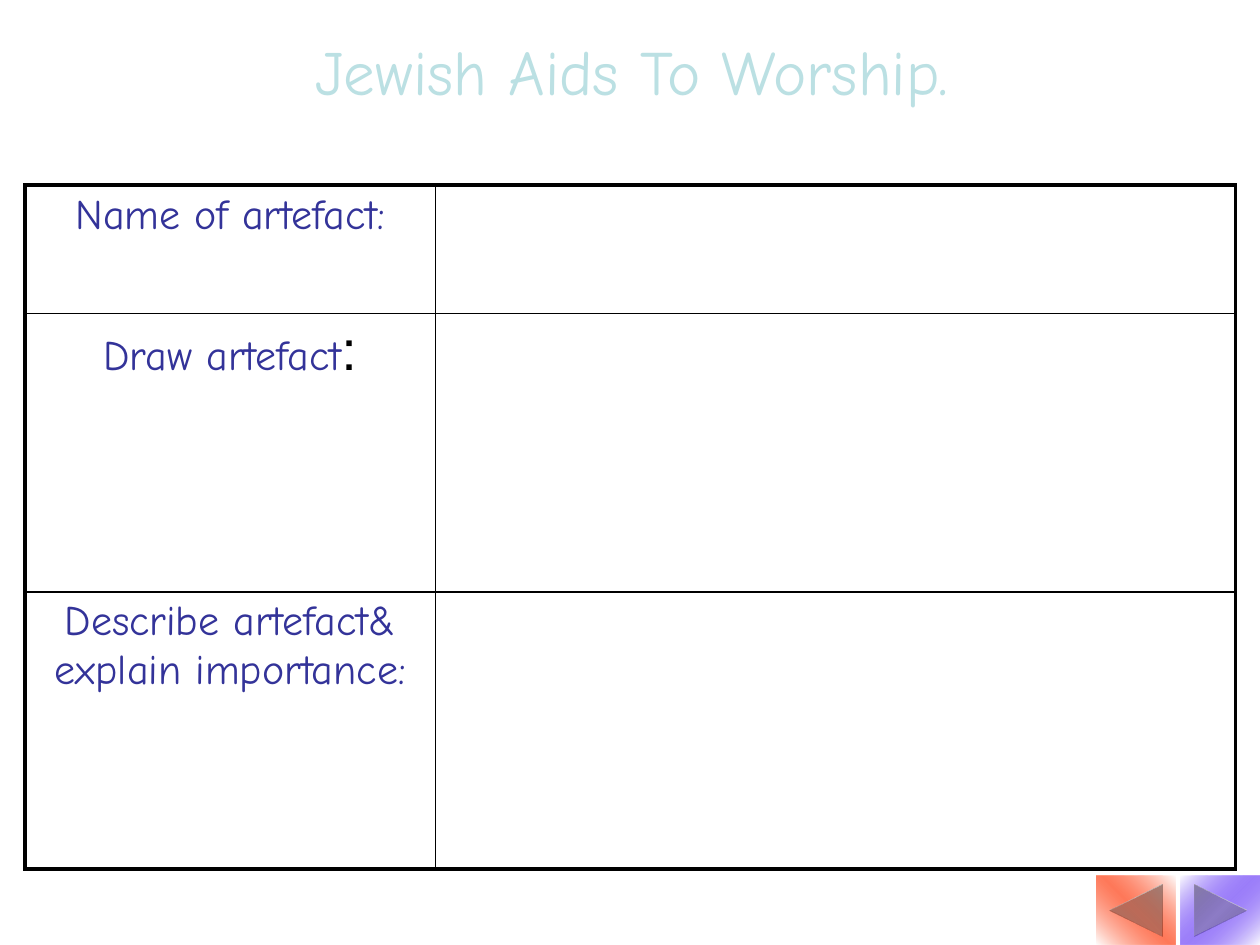
from typing import NamedTuple

from lxml.etree import SubElement
from pptx import Presentation
from pptx.dml.color import RGBColor
from pptx.enum.shapes import MSO_SHAPE as Shape
from pptx.enum.text import MSO_ANCHOR as Anchor, PP_ALIGN as Align
from pptx.oxml.ns import qn
from pptx.util import Cm, Pt

HAND, PLAIN = "Comic Neue", "Arial"
AQUA, NAVY, BLACK = "BBE0E3", "333399", "000000"
THICK, THIN = 2.25, 1


class Run(NamedTuple):
    text: str
    size: int = 24
    font: str = HAND
    tint: str = NAVY


class Row(NamedTuple):
    height: float
    runs: list[Run]


class Button(NamedTuple):
    left: float
    tint: str
    alpha: int
    flip: bool


COLS = [8.28, 16.13]
ROWS = [
    Row(2.59, [Run("Name of artefact:")]),
    Row(5.61, [Run("Draw artefact"), Run(":", 32, PLAIN, BLACK)]),
    Row(5.59, [Run("Describe artefact& explain importance:")]),
]
BUTTONS = [Button(22.1, "FF3101", 65, True), Button(23.8, "420AF6", 52, False)]


def color(code: str) -> RGBColor:
    return RGBColor.from_string(code)


def write(para, runs: list[Run]) -> None:
    para.alignment = Align.CENTER
    for item in runs:
        run = para.add_run()
        run.text = item.text
        run.font.size = Pt(item.size)
        run.font.name = item.font
        run.font.color.rgb = color(item.tint)


def add_fill(parent, code: str, alpha: int = 100):
    tint = SubElement(parent, qn("a:srgbClr"), val=code)
    if alpha < 100:
        SubElement(tint, qn("a:alpha"), val=str(alpha * 1000))


def border(cell, row: int, col: int) -> None:
    """Thick lines on the outer edge, thin lines inside."""
    outer = {"L": col == 0, "R": col == len(COLS) - 1,
             "T": row == 0, "B": row == len(ROWS) - 1}
    props = cell._tc.get_or_add_tcPr()
    for side, thick in outer.items():
        width = Pt(THICK if thick else THIN)
        line = SubElement(props, qn(f"a:ln{side}"), w=str(int(width)))
        add_fill(SubElement(line, qn("a:solidFill")), BLACK)


def draw_table(slide) -> None:
    frame = slide.shapes.add_table(
        len(ROWS), len(COLS), Cm(0.5), Cm(3.73),
        Cm(sum(COLS)), Cm(sum(row.height for row in ROWS)))
    table = frame.table
    table.first_row = table.horz_banding = False
    for col, width in enumerate(COLS):
        table.columns[col].width = Cm(width)
    for i, row in enumerate(ROWS):
        table.rows[i].height = Cm(row.height)
        for j in range(len(COLS)):
            cell = table.cell(i, j)
            border(cell, i, j)
            cell.fill.background()
        para = table.cell(i, 0).text_frame.paragraphs[0]
        para.space_before = Pt(5)
        write(para, row.runs)


def draw_button(slide, item: Button) -> None:
    shape = slide.shapes.add_shape(
        Shape.ACTION_BUTTON_FORWARD_OR_NEXT,
        Cm(item.left), Cm(17.65), Cm(1.6), Cm(1.4))
    shape.shadow.inherit = False
    shape.line.fill.background()
    if item.flip:
        shape._element.spPr.xfrm.set("flipH", "1")
    # White to tint to white, along the diagonal
    shape.fill.gradient()
    grad = shape._element.spPr.find(qn("a:gradFill"))
    for child in list(grad):
        grad.remove(child)
    stops = SubElement(grad, qn("a:gsLst"))
    for place, code, alpha in [(0, "FFFFFF", 100),
                               (50, item.tint, item.alpha),
                               (100, "FFFFFF", 100)]:
        stop = SubElement(stops, qn("a:gs"), pos=str(place * 1000))
        add_fill(stop, code, alpha)
    SubElement(grad, qn("a:lin"), ang=str(45 * 60000), scaled="1")


def main() -> None:
    deck = Presentation()
    deck.slide_width, deck.slide_height = Cm(25.4), Cm(19.05)
    slide = deck.slides.add_slide(deck.slide_layouts[5])

    # Title
    title = slide.shapes.title
    title.left, title.top = Cm(1.3), Cm(0.53)
    title.width, title.height = Cm(22.86), Cm(3.18)
    frame = title.text_frame
    frame.word_wrap = False
    frame.vertical_anchor = Anchor.TOP
    write(frame.paragraphs[0],
          [Run("Jewish Aids To Worship.", 36, HAND, AQUA)])

    # Worksheet grid and page buttons
    draw_table(slide)
    for item in BUTTONS:
        draw_button(slide, item)
    deck.save("out.pptx")


if __name__ == "__main__":
    main()
